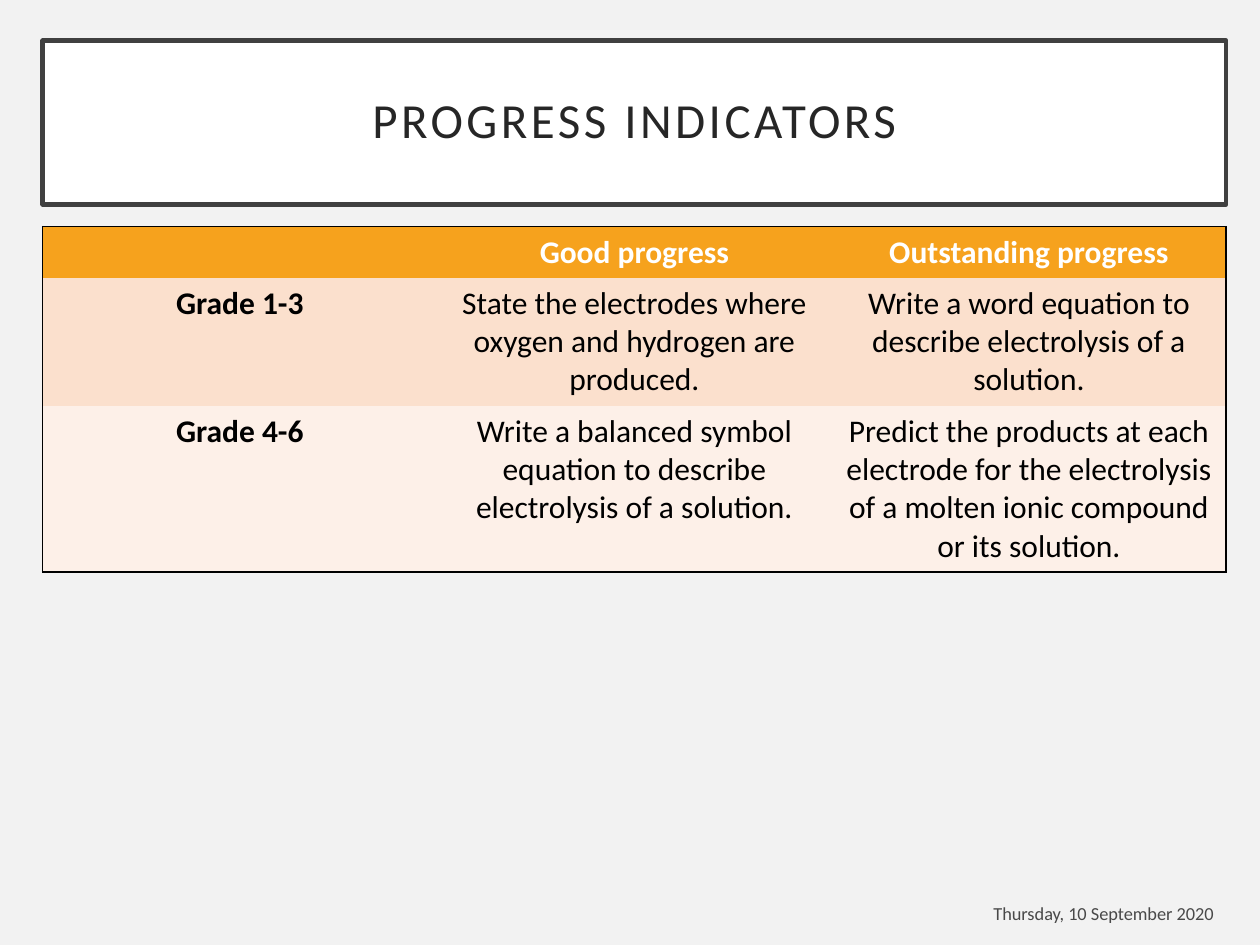
from lxml.etree import SubElement
from pptx import Presentation
from pptx.dml.color import RGBColor
from pptx.enum.text import MSO_ANCHOR, PP_ALIGN
from pptx.oxml.ns import qn
from pptx.util import Cm, Pt

BACKGROUND = RGBColor(0xF2, 0xF2, 0xF2)
WHITE = RGBColor(0xFF, 0xFF, 0xFF)
BLACK = RGBColor(0x00, 0x00, 0x00)
TITLE_TEXT = RGBColor(0x26, 0x26, 0x26)
TITLE_LINE = RGBColor(0x40, 0x40, 0x40)
DATE_TEXT = RGBColor(0x49, 0x49, 0x49)
ORANGE = RGBColor(0xF6, 0xA2, 0x1D)
PEACH = RGBColor(0xFB, 0xE0, 0xCD)
CREAM = RGBColor(0xFD, 0xF0, 0xE8)

LEFT, WIDTH = 0.86, 23.86
ROW_HEIGHTS = (1.03, 2.58, 3.35)
ROW_FILLS = (ORANGE, PEACH, CREAM)
PROGRESS = (
    ("", "Good progress", "Outstanding progress"),
    (
        "Grade 1-3",
        "State the electrodes where oxygen and hydrogen are produced.",
        "Write a word equation to describe electrolysis of a solution.",
    ),
    (
        "Grade 4-6",
        "Write a balanced symbol equation to describe electrolysis of a solution.",
        "Predict the products at each electrode for the electrolysis of a molten "
        "ionic compound or its solution.",
    ),
)


class SlideBuilder:
    """Holds the text style and the current slide, and adds each kind of element."""

    font_name = "Calibri"

    def __init__(self, presentation):
        self.slide = presentation.slides.add_slide(presentation.slide_layouts[5])
        background = self.slide.background.fill
        background.solid()
        background.fore_color.rgb = BACKGROUND

    def fill_text(self, text_frame, text, color, alignment, **font_values):
        text_frame.word_wrap = True
        paragraph = text_frame.paragraphs[0]
        paragraph.alignment = alignment
        run = paragraph.add_run()
        run.text = text
        run.font.color.rgb = color
        for name, value in {"name": self.font_name, **font_values}.items():
            setattr(run.font, name, value)
        return paragraph, run

    def place(self, shape, left, top, width, height):
        position = {"left": left, "top": top, "width": width, "height": height}
        for name, value in position.items():
            setattr(shape, name, Cm(value))

    def add_title(self, text, *position):
        shape = self.slide.shapes.title
        self.place(shape, *position)
        shape.fill.solid()
        shape.fill.fore_color.rgb = WHITE
        shape.line.color.rgb = TITLE_LINE
        shape.line.width = Pt(2.5)
        text_frame = shape.text_frame
        text_frame.vertical_anchor = MSO_ANCHOR.MIDDLE
        for side in ("left", "top", "right", "bottom"):
            setattr(text_frame, f"margin_{side}", Cm(0.5))
        paragraph, run = self.fill_text(
            text_frame, text, TITLE_TEXT, PP_ALIGN.CENTER, size=Pt(28)
        )
        paragraph.line_spacing = 0.9
        run.font._element.set("spc", "200")

    def add_text(self, text, *position):
        shape = self.slide.shapes.add_textbox(*map(Cm, position))
        shape.text_frame.vertical_anchor = MSO_ANCHOR.MIDDLE
        self.fill_text(
            shape.text_frame, text, DATE_TEXT, PP_ALIGN.RIGHT, size=Pt(10.5)
        )

    def set_borders(self, cell, edges):
        properties = cell._tc.get_or_add_tcPr()
        for side, visible in edges.items():
            line = SubElement(properties, qn(f"a:ln{side}"), w=str(Pt(1)))
            if visible:
                fill = SubElement(line, qn("a:solidFill"))
                SubElement(fill, qn("a:srgbClr"), val=str(BLACK))
            else:
                SubElement(line, qn("a:noFill"))

    def add_table(self, rows, left, top, width):
        last_row, last_column = len(rows) - 1, len(rows[0]) - 1
        frame = self.slide.shapes.add_table(
            len(rows), len(rows[0]), Cm(left), Cm(top), Cm(width), Cm(sum(ROW_HEIGHTS))
        )
        table = frame.table
        for row_index, texts in enumerate(rows):
            table.rows[row_index].height = Cm(ROW_HEIGHTS[row_index])
            for column_index, text in enumerate(texts):
                cell = table.cell(row_index, column_index)
                edges = {
                    "L": column_index == 0,
                    "R": column_index == last_column,
                    "T": row_index == 0,
                    "B": row_index == last_row,
                }
                self.set_borders(cell, edges)
                cell.fill.solid()
                cell.fill.fore_color.rgb = ROW_FILLS[row_index]
                if text:
                    self.fill_text(
                        cell.text_frame,
                        text,
                        WHITE if row_index == 0 else BLACK,
                        PP_ALIGN.CENTER,
                        size=Pt(18),
                        bold=row_index == 0 or column_index == 0,
                    )


def main():
    presentation = Presentation()
    presentation.slide_width = Cm(25.4)
    presentation.slide_height = Cm(19.05)
    builder = SlideBuilder(presentation)
    builder.add_title("PROGRESS INDICATORS", LEFT, 0.82, WIDTH, 3.3)
    builder.add_table(PROGRESS, LEFT, 4.57, WIDTH)
    builder.add_text("Thursday, 10 September 2020", 18.97, 17.96, 5.75, 0.89)
    presentation.save("out.pptx")


if __name__ == "__main__":
    main()
